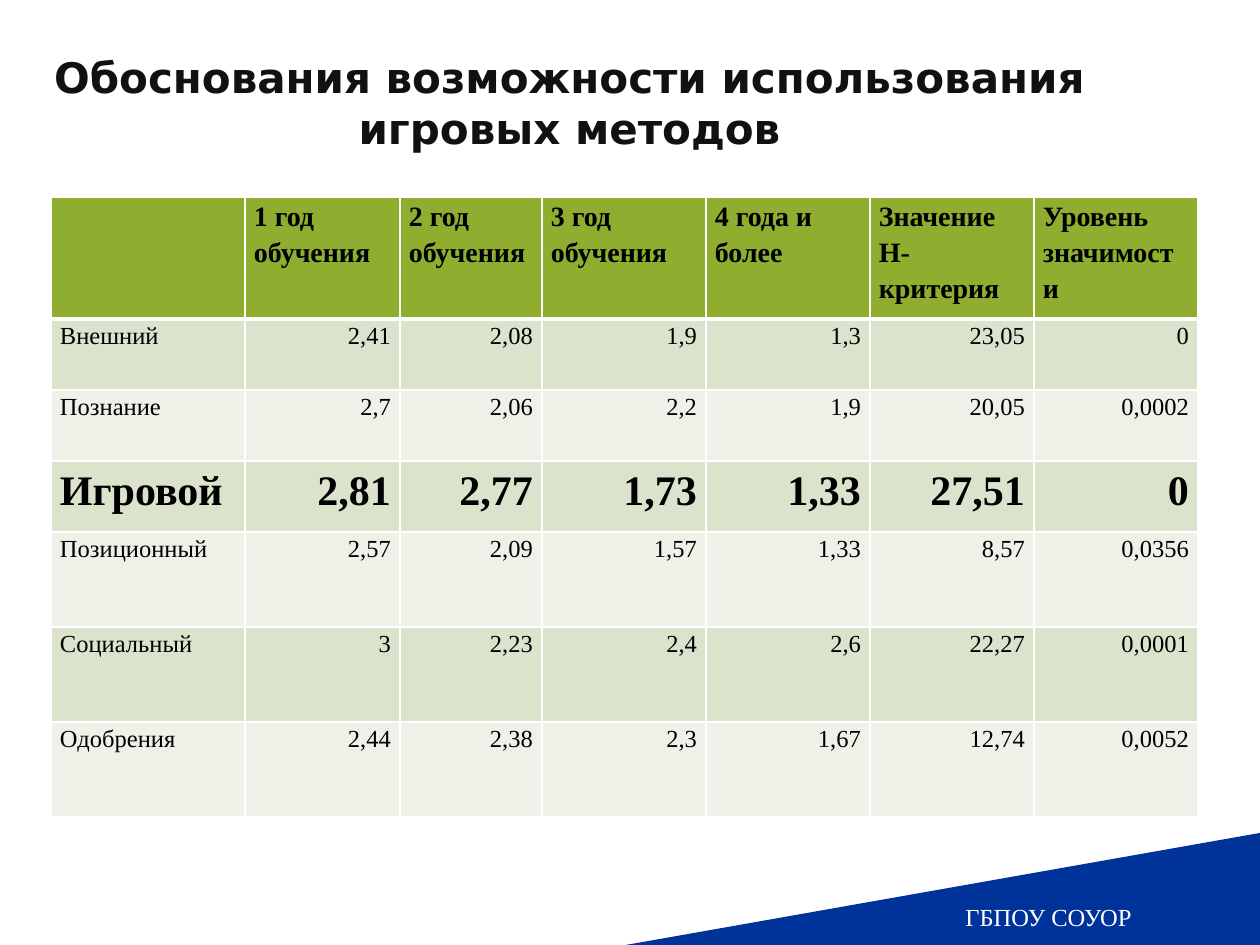
from pptx import Presentation
from pptx.dml.color import RGBColor
from pptx.enum.shapes import MSO_SHAPE
from pptx.enum.text import MSO_ANCHOR, PP_ALIGN
from pptx.oxml.ns import qn
from pptx.util import Emu, Pt
from lxml import etree

PX_PER_INCH = 126
LEFT, CENTER, RIGHT = PP_ALIGN.LEFT, PP_ALIGN.CENTER, PP_ALIGN.RIGHT
MIDDLE = MSO_ANCHOR.MIDDLE
TRIANGLE = MSO_SHAPE.RIGHT_TRIANGLE

HEADERS = ["", "1 год обучения", "2 год обучения", "3 год обучения",
           "4 года и более", "Значение\nН-критерия", "Уровень значимости"]
MOTIVES = [
    ["Внешний", "2,41", "2,08", "1,9", "1,3", "23,05", "0"],
    ["Познание", "2,7", "2,06", "2,2", "1,9", "20,05", "0,0002"],
    ["Игровой", "2,81", "2,77", "1,73", "1,33", "27,51", "0"],
    ["Позиционный", "2,57", "2,09", "1,57", "1,33", "8,57", "0,0356"],
    ["Социальный", "3", "2,23", "2,4", "2,6", "22,27", "0,0001"],
    ["Одобрения", "2,44", "2,38", "2,3", "1,67", "12,74", "0,0052"],
]
KEY_MOTIVE = "Игровой"
COLUMN_WIDTHS = [194, 155, 142] + [164] * 4
ROW_HEIGHTS = [122] + [71] * 3 + [95] * 3


def px(length):
    return Emu(round(length * 914400 / PX_PER_INCH))


def color(value):
    return RGBColor.from_string(value)


class SlideBuilder:
    title_font = "DejaVu Sans"
    body_font = "Times New Roman"
    title_color = "111111"
    text_color = "000000"
    white = "FFFFFF"
    corner_color = "003399"
    header_color = "8FAD2F"
    band_colors = ["DBE3CD", "EEF1E8"]

    def __init__(self, deck):
        self.page = deck.slides.add_slide(deck.slide_layouts[6])

    def label(self, frame, text, size, font, tint, align, bold=False, spacing=None):
        frame.word_wrap = True
        frame.text = text
        for para in frame.paragraphs:
            para.alignment = align
            para.line_spacing = spacing
            for span in para.runs:
                span.font.name = font
                span.font.size = Pt(size)
                span.font.bold = bold
                span.font.color.rgb = color(tint)

    def title(self, text, left, top, width, height):
        box = self.page.shapes.add_textbox(px(left), px(top), px(width), px(height))
        box.text_frame.vertical_anchor = MIDDLE
        self.label(box.text_frame, text, 24, self.title_font, self.title_color,
                   CENTER, bold=True)

    def corner(self, text, left, top, width, height):
        shape = self.page.shapes.add_shape(TRIANGLE, px(left), px(top),
                                           px(width), px(height))
        shape.shadow.inherit = False
        shape.fill.solid()
        shape.fill.fore_color.rgb = color(self.corner_color)
        shape.line.fill.background()
        shape.element.spPr.find(qn("a:xfrm")).set("flipH", "1")
        shape.text_frame.vertical_anchor = MIDDLE
        self.label(shape.text_frame, text, 14, self.body_font, self.white, CENTER)

    def border(self, cell, side, points):
        properties = cell._tc.get_or_add_tcPr()
        line = etree.SubElement(properties, qn(f"a:ln{side}"), w=str(Pt(points)))
        fill = etree.SubElement(line, qn("a:solidFill"))
        etree.SubElement(fill, qn("a:srgbClr"), val=self.white)

    def cell(self, cell, text, row, column):
        header = row == 0
        cell.margin_left = cell.margin_right = px(9)
        cell.margin_top = cell.margin_bottom = 0
        for side in "LRTB":
            thick = (side == "B" and row == 0) or (side == "T" and row == 1)
            self.border(cell, side, 3 if thick else 1)
        cell.fill.solid()
        cell.fill.fore_color.rgb = color(
            self.header_color if header else self.band_colors[(row - 1) % 2])
        key = not header and MOTIVES[row - 1][0] == KEY_MOTIVE
        size = 16 if header else 24 if key else 14
        align = LEFT if header or column == 0 else RIGHT
        self.label(cell.text_frame, text, size, self.body_font, self.text_color,
                   align, bold=header or key, spacing=1.15)

    def table(self, rows, left, top, widths, heights):
        table = self.page.shapes.add_table(
            len(rows), len(widths), px(left), px(top),
            px(sum(widths)), px(sum(heights))).table
        for column, width in zip(table.columns, widths):
            column.width = px(width)
        for row, height in zip(table.rows, heights):
            row.height = px(height)
        for row, texts in enumerate(rows):
            for column, text in enumerate(texts):
                self.cell(table.cell(row, column), text, row, column)


def main():
    deck = Presentation()
    deck.slide_width, deck.slide_height = px(1260), px(945)
    slide = SlideBuilder(deck)
    slide.corner("ГБПОУ СОУОР", 626, 833, 634, 112)
    slide.title("Обоснования возможности использования игровых методов",
                29, 60, 1081, 84)
    slide.table([HEADERS] + MOTIVES, 51, 197, COLUMN_WIDTHS, ROW_HEIGHTS)
    deck.save("out.pptx")


if __name__ == "__main__":
    main()
